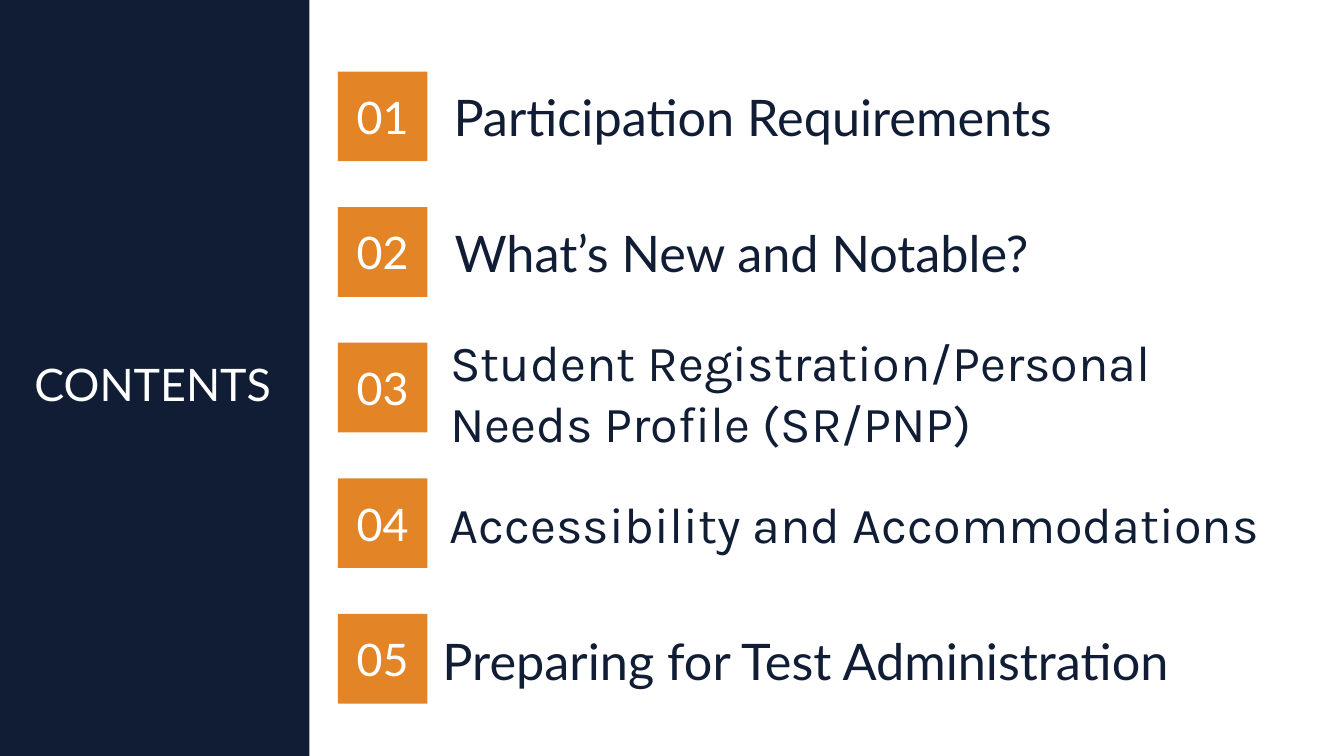
"""Build a contents slide with five numbered sections beside a dark sidebar."""
from pptx import Presentation
from pptx.dml.color import RGBColor
from pptx.enum.shapes import MSO_SHAPE as Shape
from pptx.enum.text import MSO_ANCHOR as Anchor, MSO_AUTO_SIZE as AutoSize, PP_ALIGN as Align
from pptx.util import Inches, Pt

NAVY = RGBColor(0x10, 0x1D, 0x35)
ORANGE = RGBColor(0xE3, 0x85, 0x26)
WHITE = RGBColor(0xFF, 0xFF, 0xFF)

HEADING = "CONTENTS"
SECTIONS = [
    {"text": "Participation Requirements", "font": "Lato", "left": 4.4, "drop": 0},
    {"text": "What’s New and Notable?", "font": "Lato", "left": 4.41, "drop": 0},
    {"text": "Student Registration/Personal Needs Profile (SR/PNP)",
     "font": "Karla", "left": 4.37, "drop": 0.04},
    {"text": "Accessibility and Accommodations", "font": "Karla", "left": 4.36, "drop": 0},
    {"text": "Preparing for Test Administration", "font": "Lato", "left": 4.29, "drop": 0.02},
]

BADGE_LEFT, BADGE_SIZE = 3.35, 0.89
FIRST_TOP, ROW_STEP = 0.71, 1.345
LABEL_WIDTH, LABEL_HEIGHT = 8.5, 1.31


def write(box, text, font="Lato", size=32, color=WHITE, align=Align.CENTER):
    """Put one formatted paragraph in the middle of a shape."""
    frame = box.text_frame
    frame.word_wrap = True
    frame.auto_size = AutoSize.NONE
    frame.vertical_anchor = Anchor.MIDDLE
    para = frame.paragraphs[0]
    para.alignment = align
    span = para.add_run()
    span.text = text
    span.font.name, span.font.size = font, Pt(size)
    span.font.color.rgb = color


def add_block(page, left, top, width, height, color):
    """Add a plain filled rectangle."""
    block = page.shapes.add_shape(
        Shape.RECTANGLE, Inches(left), Inches(top), Inches(width), Inches(height))
    block.shadow.inherit = False
    block.fill.solid()
    block.fill.fore_color.rgb = color
    block.line.fill.background()
    return block


def main():
    """Create the slide and save it."""
    deck = Presentation()
    deck.slide_width, deck.slide_height = Inches(13.33), Inches(7.5)
    page = deck.slides.add_slide(deck.slide_layouts[5])

    title = page.shapes.title
    title.left, title.top = Inches(0), Inches(3.49)
    title.width, title.height = Inches(3.03), Inches(0.64)
    write(title, HEADING)
    sidebar = add_block(page, 0, 0, 3.07, 7.5, NAVY)
    title.element.addprevious(sidebar.element)

    for row, section in enumerate(SECTIONS):
        top = FIRST_TOP + row * ROW_STEP
        badge = add_block(page, BADGE_LEFT, top, BADGE_SIZE, BADGE_SIZE, ORANGE)
        write(badge, f"{row + 1:02}")
        label_top = top + (BADGE_SIZE - LABEL_HEIGHT) / 2 + section["drop"]
        label = page.shapes.add_textbox(
            Inches(section["left"]), Inches(label_top), Inches(LABEL_WIDTH), Inches(LABEL_HEIGHT))
        write(label, section["text"], font=section["font"], size=36, color=NAVY, align=Align.LEFT)

    deck.save("out.pptx")


if __name__ == "__main__":
    main()
